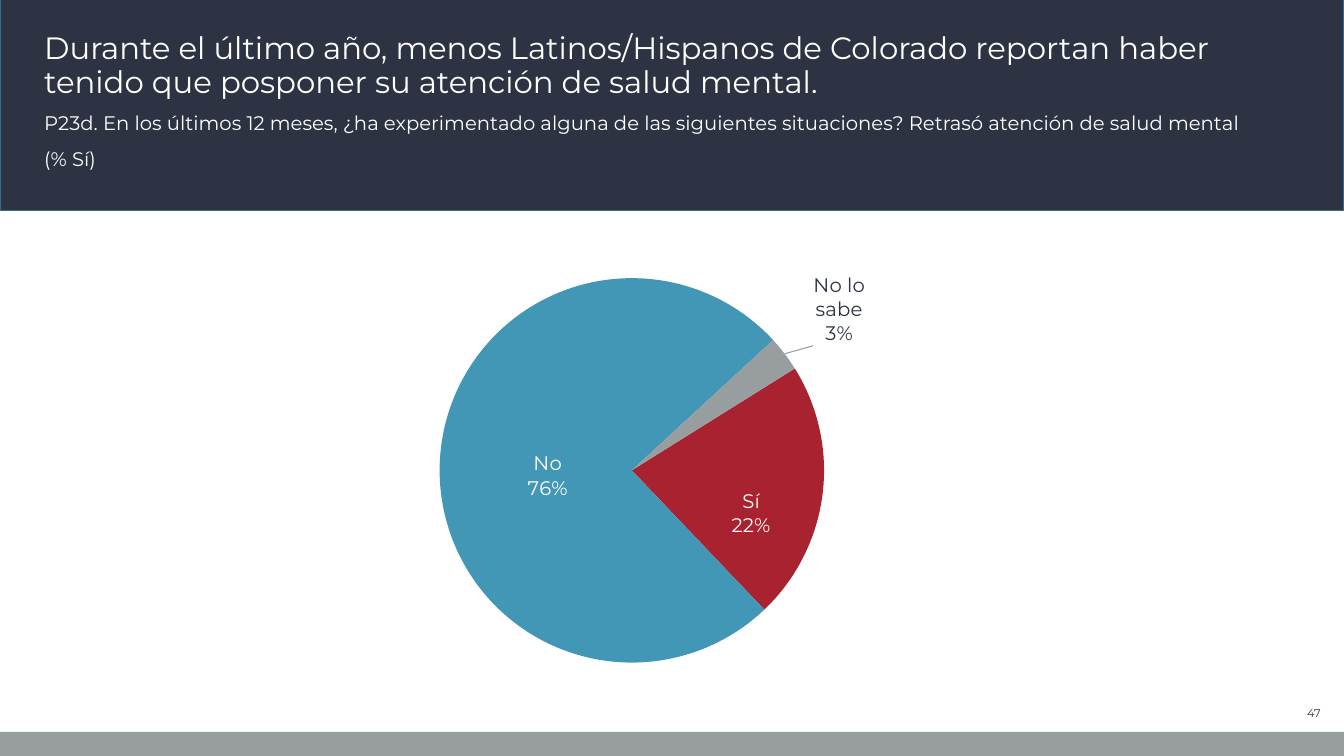
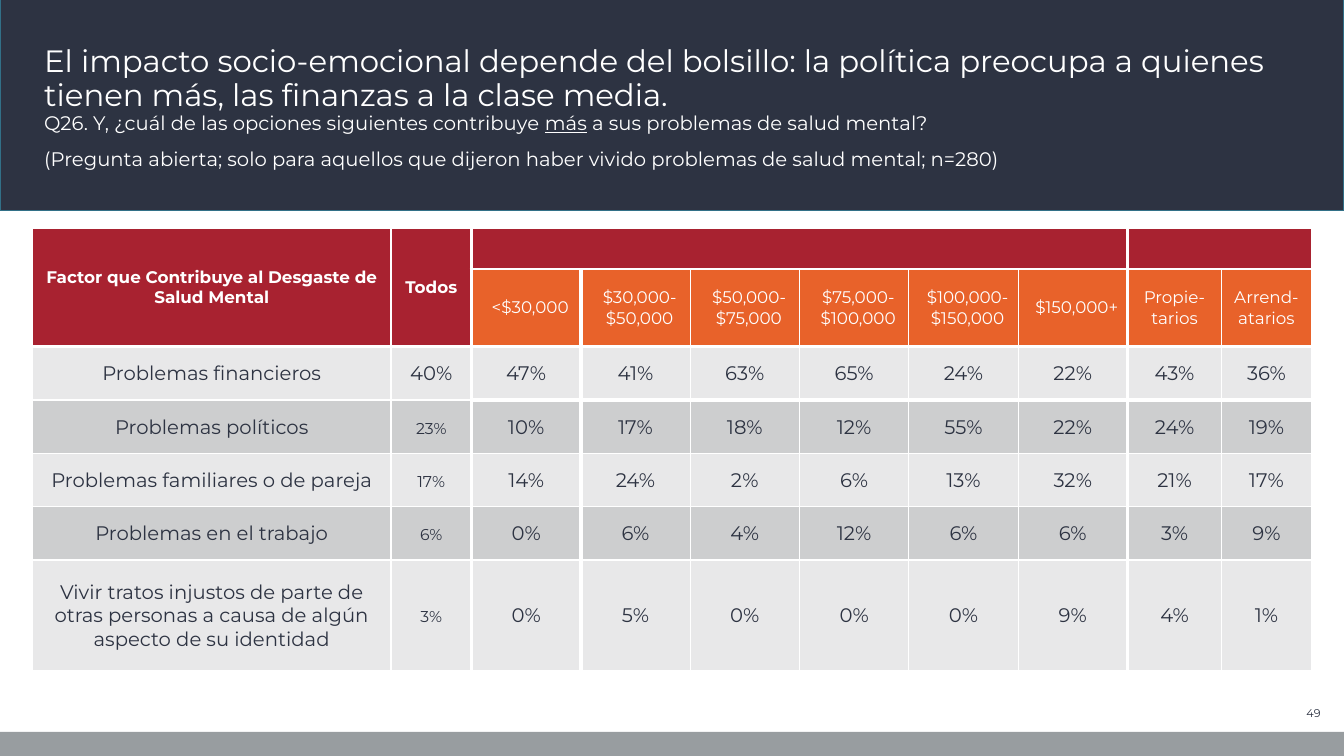
from lxml import etree
from pptx import Presentation
from pptx.chart.data import CategoryChartData
from pptx.dml.color import RGBColor
from pptx.enum.chart import XL_CHART_TYPE as ChartType, XL_LABEL_POSITION as LabelPosition
from pptx.enum.shapes import MSO_SHAPE as Preset
from pptx.enum.text import MSO_ANCHOR as Anchor, PP_ALIGN as Align
from pptx.oxml import parse_xml
from pptx.oxml.ns import nsdecls, qn
from pptx.util import Pt

NAVY = RGBColor(0x2D, 0x33, 0x42)
TEAL = RGBColor(0x32, 0x70, 0x87)
GRAY = RGBColor(0x98, 0x9D, 0xA0)
RED = RGBColor(0xA8, 0x22, 0x30)
BLUE = RGBColor(0x43, 0x97, 0xB6)
ORANGE = RGBColor(0xE8, 0x62, 0x2A)
LIGHT = RGBColor(0xE8, 0xE8, 0xE9)
MEDIUM = RGBColor(0xCD, 0xCE, 0xCF)
WHITE = RGBColor(0xFF, 0xFF, 0xFF)
FONT = "Montserrat"
WIDTH, HEIGHT = 960, 540

# Content: a question line is a list of (text, underlined) runs
DELAY = {
    "title": "Durante el último año, menos Latinos/Hispanos de Colorado reportan haber "
             "tenido que posponer su atención de salud mental.",
    "title_bottom": 74.9,
    "question": [
        [("P23d. En los últimos 12 meses, ¿ha experimentado alguna de las siguientes "
          "situaciones? Retrasó atención de salud mental", False)],
        [("(% Sí)", False)],
    ],
    "number": "47",
}
FACTORS = {
    "title": "El impacto socio-emocional depende del bolsillo: la política preocupa a quienes "
             "tienen más, las finanzas a la clase media.",
    "title_bottom": 84.2,
    "question": [
        [("Q26. Y, ¿cuál de las opciones siguientes contribuye ", False), ("más", True),
         (" a sus problemas de salud mental?", False)],
        [("(Pregunta abierta; solo para aquellos que dijeron haber vivido problemas de "
          "salud mental; n=280)", False)],
    ],
    "number": "49",
}
# Answer, share, slice colour, label colour, label position, label shift (fractions of the chart)
ANSWERS = [
    ("Sí", 0.22, RED, WHITE, LabelPosition.CENTER, (0.04, 0.07)),
    ("No", 0.76, BLUE, WHITE, LabelPosition.CENTER, (0.02, 0.02)),
    ("No lo sabe", 0.03, GRAY, NAVY, LabelPosition.OUTSIDE_END, (0.04, -0.01)),
]
FACTOR_HEADINGS = ["Factor que Contribuye al Desgaste de Salud Mental", "Todos"]
GROUP_HEADINGS = [
    "<$30,000", "$30,000-$50,000", "$50,000-$75,000", "$75,000-$100,000",
    "$100,000-$150,000", "$150,000+", "Propie-tarios", "Arrend-atarios",
]
FACTOR_ROWS = [
    ("Problemas financieros", [40, 47, 41, 63, 65, 24, 22, 43, 36]),
    ("Problemas políticos", [23, 10, 17, 18, 12, 55, 22, 24, 19]),
    ("Problemas familiares o de pareja", [17, 14, 24, 2, 6, 13, 32, 21, 17]),
    ("Problemas en el trabajo", [6, 0, 6, 4, 12, 6, 6, 3, 9]),
    ("Vivir tratos injustos de parte de otras personas a causa de algún aspecto de su identidad",
     [3, 0, 5, 0, 0, 0, 9, 4, 1]),
]
COLUMN_WIDTHS = [256, 57.5] + [78.1] * 6 + [67.3, 64]
ROW_HEIGHTS = [29.2, 55.4] + [38.1] * 4 + [79.2]
MERGES = [(0, 0, 1, 0), (0, 1, 1, 1), (0, 2, 0, 7), (0, 8, 0, 9)]
THICK_AFTER_COLUMNS = {1, 2, 7}


def style(font, size, color, bold=False):
    font.name, font.size, font.bold = FONT, Pt(size), bold
    font.color.rgb = color


def add_band(slide, top, height, fill, line=None):
    band = slide.shapes.add_shape(Preset.RECTANGLE, 0, Pt(top), Pt(WIDTH), Pt(height))
    band.shadow.inherit = False
    band.fill.solid()
    band.fill.fore_color.rgb = fill
    if line is None:
        band.line.fill.background()
    else:
        band.line.color.rgb = line
        band.line.width = Pt(1)


def add_text(slide, box, lines, size, color, anchor=Anchor.TOP, align=Align.LEFT, spacing=0.9):
    frame = slide.shapes.add_textbox(*map(Pt, box)).text_frame
    frame.word_wrap = True
    frame.vertical_anchor = anchor
    for index, runs in enumerate(lines):
        paragraph = frame.paragraphs[0] if index == 0 else frame.add_paragraph()
        paragraph.alignment = align
        paragraph.line_spacing = spacing
        if index:
            paragraph.space_before = Pt(10)
        style(paragraph.font, size, color)
        for text, underlined in runs:
            run = paragraph.add_run()
            run.text = text
            if underlined:
                run.font.underline = True


def add_page(presentation, content):
    """Add a slide with the shared bands, title, question and number."""
    slide = presentation.slides.add_slide(presentation.slide_layouts[6])
    add_band(slide, -2.2, 152.6, NAVY, TEAL)
    add_band(slide, 522.7, HEIGHT - 522.7, GRAY)
    add_text(slide, (894.2, 500.4, 56.2, 17.3), [[(content["number"], False)]], 8, NAVY,
             Anchor.MIDDLE, Align.RIGHT, 1.0)
    add_text(slide, (24.5, 77.8, 910, 66.2), content["question"], 14, WHITE)
    add_text(slide, (24.5, 5, 910, content["title_bottom"] - 5),
             [[(content["title"], False)]], 22, WHITE, Anchor.BOTTOM)
    return slide


def manual_layout(x, y, size=None):
    values = {"x": x, "y": y}
    if size:
        values = {"layoutTarget": "inner", "xMode": "edge", "yMode": "edge", **values,
                  "w": size[0], "h": size[1]}
    items = "".join(f'<c:{name} val="{value}"/>' for name, value in values.items())
    return parse_xml(f'<c:layout {nsdecls("c")}><c:manualLayout>{items}'
                     "</c:manualLayout></c:layout>")


def add_pie(slide):
    data = CategoryChartData(number_format="0%")
    data.categories = [answer[0] for answer in ANSWERS]
    data.add_series("Series 1", [answer[1] for answer in ANSWERS])
    chart = slide.shapes.add_chart(ChartType.PIE, Pt(223.9), Pt(175.7), Pt(429.1), Pt(317.5),
                                   data).chart
    chart.has_legend = chart.has_title = False
    style(chart.font, 10, NAVY)
    plot = chart.plots[0]
    plot.vary_by_categories = True
    series = plot.series[0]
    labels = series.data_labels
    labels.show_value = labels.show_category_name = True
    labels.number_format, labels.number_format_is_linked = "0%", False
    style(labels.font, 14, WHITE)

    # Slices and their labels
    for index, (_, _, fill, color, position, _) in enumerate(ANSWERS):
        point = series.points[index]
        point.format.fill.solid()
        point.format.fill.fore_color.rgb = fill
        point.format.line.fill.background()
        style(point.data_label.font, 14, color)
        point.data_label.position = position
    label_list = series._element.find(qn("c:dLbls"))
    for label, answer in zip(label_list.findall(qn("c:dLbl")), ANSWERS):
        label.insert(1, manual_layout(*answer[5]))
        label.find(qn("c:showCatName")).set("val", "1")
        etree.SubElement(label, qn("c:separator")).text = "\n"

    # Leader line, first angle and plot area
    leader = label_list.find(qn("c:showLeaderLines"))
    if leader is None:
        leader = etree.SubElement(label_list, qn("c:showLeaderLines"))
    leader.set("val", "1")
    leader.addnext(parse_xml(
        f'<c:leaderLines {nsdecls("c", "a")}><c:spPr><a:ln w="9525"><a:solidFill>'
        f'<a:srgbClr val="{GRAY}"/></a:solidFill></a:ln></c:spPr></c:leaderLines>'))
    pie = plot._element
    for angle in pie.findall(qn("c:firstSliceAng")):
        pie.remove(angle)
    etree.SubElement(pie, qn("c:firstSliceAng")).set("val", "58")
    area = pie.getparent()
    for layout in area.findall(qn("c:layout")):
        area.remove(layout)
    area.insert(0, manual_layout(0.21, 0.06, (0.64, 0.89)))


def set_borders(cell, widths):
    properties = cell._tc.get_or_add_tcPr()
    for index, (side, width) in enumerate(widths.items()):
        properties.insert(index, parse_xml(
            f'<a:{side} {nsdecls("a")} w="{Pt(width)}"><a:solidFill>'
            f'<a:srgbClr val="{WHITE}"/></a:solidFill></a:{side}>'))


def column_line(column):
    return 3 if column in THICK_AFTER_COLUMNS else 1


def row_line(row, column):
    return 3 if row == 1 or (row == 2 and column >= 2) else 1


def cell_look(row, column):
    """Return fill, text colour, size, bold and margins (left, top, right, bottom)."""
    if row > 1:
        return (MEDIUM if row % 2 else LIGHT), NAVY, 14, False, (0.7, 0.7, 0.7, 0)
    if row == 0:
        side = 7.2 if column == 0 else 0
        return RED, WHITE, 12, True, (side, 7.2, side, 7.2)
    return ORANGE, WHITE, 12, False, (6.5 if column < 8 else 0.7, 7.2, 0.7, 7.2)


def add_factor_table(slide):
    texts = [FACTOR_HEADINGS + [""] * 8, [""] * 2 + GROUP_HEADINGS]
    texts += [[name] + [f"{value}%" for value in values] for name, values in FACTOR_ROWS]
    table = slide.shapes.add_table(len(ROW_HEIGHTS), len(COLUMN_WIDTHS), Pt(23.3), Pt(163),
                                   Pt(sum(COLUMN_WIDTHS)), Pt(sum(ROW_HEIGHTS))).table
    table.first_row = table.horz_banding = False
    for column, width in zip(table.columns, COLUMN_WIDTHS):
        column.width = Pt(width)
    for row, height in zip(table.rows, ROW_HEIGHTS):
        row.height = Pt(height)
    for top, left, bottom, right in MERGES:
        table.cell(top, left).merge(table.cell(bottom, right))

    for row, row_texts in enumerate(texts):
        for column, text in enumerate(row_texts):
            cell = table.cell(row, column)
            if cell.is_spanned:
                continue
            fill, color, size, bold, margins = cell_look(row, column)
            cell.fill.solid()
            cell.fill.fore_color.rgb = fill
            cell.vertical_anchor = Anchor.MIDDLE
            (cell.margin_left, cell.margin_top,
             cell.margin_right, cell.margin_bottom) = map(Pt, margins)
            paragraph = cell.text_frame.paragraphs[0]
            paragraph.alignment = Align.CENTER
            style(paragraph.font, size, color, bold)
            if text:
                run = paragraph.add_run()
                run.text = text
                if column == 1 and row > 2:
                    run._r.get_or_add_rPr().set("cap", "small")
            last_row, last_column = row, column
            if cell.is_merge_origin:
                last_row += cell.span_height - 1
                last_column += cell.span_width - 1
            set_borders(cell, {
                "lnL": column_line(column - 1), "lnR": column_line(last_column),
                "lnT": row_line(row - 1, column), "lnB": row_line(last_row, column)})


def main():
    presentation = Presentation()
    presentation.slide_width, presentation.slide_height = Pt(WIDTH), Pt(HEIGHT)
    add_pie(add_page(presentation, DELAY))
    add_factor_table(add_page(presentation, FACTORS))
    presentation.save("out.pptx")


if __name__ == "__main__":
    main()
